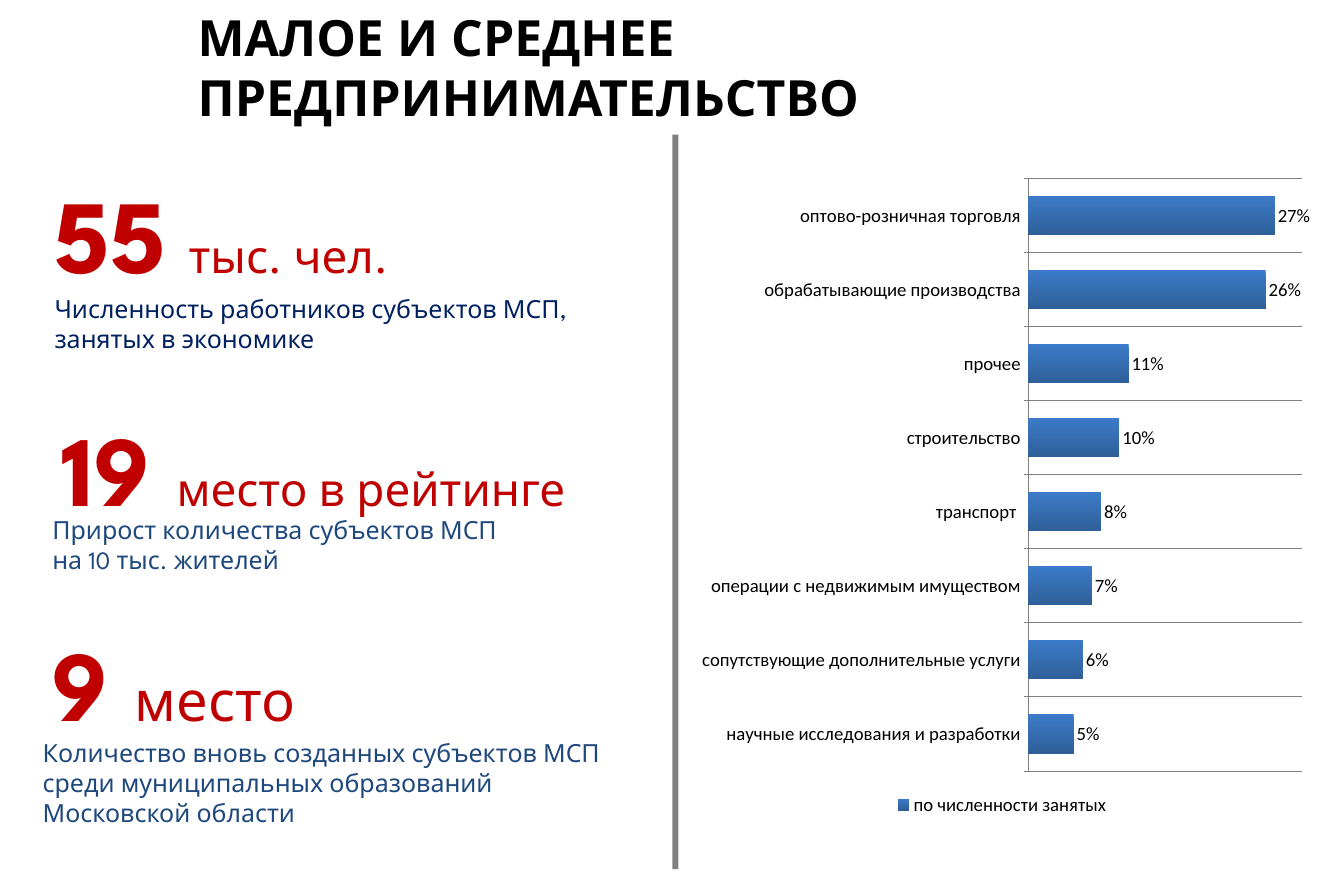
from dataclasses import dataclass

from pptx import Presentation
from pptx.chart.data import CategoryChartData
from pptx.dml.color import RGBColor
from pptx.enum.chart import XL_CHART_TYPE, XL_LABEL_POSITION, XL_LEGEND_POSITION, XL_TICK_MARK
from pptx.enum.shapes import MSO_SHAPE
from pptx.enum.text import MSO_ANCHOR, MSO_AUTO_SIZE
from pptx.util import Inches, Pt

BAR_CLUSTERED = XL_CHART_TYPE.BAR_CLUSTERED
LABEL_OUTSIDE = XL_LABEL_POSITION.OUTSIDE_END
LEGEND_BOTTOM = XL_LEGEND_POSITION.BOTTOM
TICK_OUTSIDE = XL_TICK_MARK.OUTSIDE
RECTANGLE = MSO_SHAPE.RECTANGLE
TOP, MIDDLE = MSO_ANCHOR.TOP, MSO_ANCHOR.MIDDLE
GROW = MSO_AUTO_SIZE.SHAPE_TO_FIT_TEXT
FIXED = MSO_AUTO_SIZE.NONE

HEADING_FONT, CHART_FONT = "League Spartan", "Calibri"
BLACK, RED, NAVY, BLUE, GRAY = "000000", "C00000", "002060", "1F497D", "808080"
BAR_TOP, BAR_BOTTOM = "3C7BC9", "2F5F98"

EMPLOYMENT = [
    ("научные исследования и разработки", 0.05),
    ("сопутствующие дополнительные услуги", 0.06),
    ("операции с недвижимым имуществом", 0.07),
    ("транспорт ", 0.08),
    ("строительство", 0.1),
    ("прочее", 0.11),
    ("обрабатывающие производства", 0.26),
    ("оптово-розничная торговля", 0.27),
]


@dataclass
class Run:
    text: str
    size: float
    color: str
    bold: bool = False


@dataclass
class TextBlock:
    box: tuple[float, float, float, float]
    paragraphs: list[list[Run]]
    margins: tuple[float, float] = (0.19, 0.1)
    wrap: bool = True


INDICATORS = [
    TextBlock((0.63, 2.21, 7.11, 3.43), [
        [Run("55", 100, RED, True), Run(" ", 80, RED, True), Run("тыс. чел.", 44, RED)],
        [Run("Численность работников субъектов МСП, занятых в экономике", 24, NAVY)],
    ], margins=(0.1, 0.05)),
    TextBlock((0.63, 5.33, 7.93, 1.81), [
        [Run("19 ", 96, RED, True), Run("место в рейтинге", 44, RED)],
    ]),
    TextBlock((0.51, 6.77, 8.2, 1), [
        [Run("Прирост количества субъектов МСП", 24, BLUE)],
        [Run("на 10 тыс. жителей", 24, BLUE)],
    ]),
    TextBlock((0.51, 8.2, 3.95, 1.81), [
        [Run("9 ", 96, RED, True), Run("место", 54, RED)],
    ], wrap=False),
    TextBlock((0.38, 9.76, 8.2, 1.4), [
        [Run("Количество вновь созданных субъектов МСП среди муниципальных "
             "образований Московской области", 24, BLUE)],
    ]),
]


def rgb(color: str) -> RGBColor:
    return RGBColor.from_string(color)


def add_text(slide, paragraphs: list[list[Run]], *, box: tuple[float, float, float, float],
             margins: tuple[float, float], wrap: bool = True, anchor=TOP, auto_size=GROW) -> None:
    frame = slide.shapes.add_textbox(*map(Inches, box)).text_frame
    frame.word_wrap = wrap
    frame.auto_size = auto_size
    frame.vertical_anchor = anchor
    frame.margin_left = frame.margin_right = Inches(margins[0])
    frame.margin_top = frame.margin_bottom = Inches(margins[1])
    for index, parts in enumerate(paragraphs):
        paragraph = frame.add_paragraph() if index else frame.paragraphs[0]
        for part in parts:
            run = paragraph.add_run()
            run.text = part.text
            run.font.name = HEADING_FONT
            run.font.size = Pt(part.size)
            run.font.bold = part.bold
            run.font.color.rgb = rgb(part.color)


def add_employment_chart(slide) -> None:
    data = CategoryChartData(number_format="0%")
    data.categories = [sector for sector, _ in EMPLOYMENT]
    data.add_series("по численности занятых", [share for _, share in EMPLOYMENT])
    area = map(Inches, (9.21, 2.21, 8.35, 8.74))
    chart = slide.shapes.add_chart(BAR_CLUSTERED, *area, data).chart
    chart.font.name = CHART_FONT
    chart.font.size = Pt(18)
    chart.font.color.rgb = rgb(BLACK)
    chart.has_title = False
    chart.has_legend = True
    chart.legend.position = LEGEND_BOTTOM
    chart.legend.include_in_layout = False

    # Axes
    sectors, shares = chart.category_axis, chart.value_axis
    sectors.major_tick_mark = TICK_OUTSIDE
    sectors.has_major_gridlines = True
    for line in (sectors.format.line, sectors.major_gridlines.format.line):
        line.color.rgb = rgb(GRAY)
        line.width = Pt(0.75)
    shares.visible = False
    shares.has_major_gridlines = False
    shares.minimum_scale, shares.maximum_scale = 0, 0.3

    # Bars and their labels
    plot = chart.plots[0]
    plot.gap_width = 88
    plot.vary_by_categories = False
    fill = plot.series[0].format.fill
    fill.gradient()
    fill.gradient_angle = 270
    for stop, color in zip(fill.gradient_stops, (BAR_TOP, BAR_BOTTOM)):
        stop.color.rgb = rgb(color)
    plot.has_data_labels = True
    labels = plot.data_labels
    labels.show_value = True
    labels.number_format = "0%"
    labels.number_format_is_linked = False
    labels.position = LABEL_OUTSIDE


def main() -> None:
    deck = Presentation()
    deck.slide_width, deck.slide_height = Inches(17.95), Inches(11.81)
    slide = deck.slides.add_slide(deck.slide_layouts[6])

    # Title
    add_text(slide, [[Run("МАЛОЕ И СРЕДНЕЕ ПРЕДПРИНИМАТЕЛЬСТВО", 48, BLACK, True)]],
             box=(2.47, 0, 15.26, 1.77), margins=(0.17, 0.09), anchor=MIDDLE, auto_size=FIXED)

    # Employment by sector
    add_employment_chart(slide)

    # Divider between the indicators and the chart
    divider = slide.shapes.add_shape(RECTANGLE, *map(Inches, (8.98, 1.8, 0.08, 9.81)))
    divider.shadow.inherit = False
    divider.fill.solid()
    divider.fill.fore_color.rgb = rgb(GRAY)
    divider.line.fill.background()

    # Key indicators
    for block in INDICATORS:
        add_text(slide, block.paragraphs, box=block.box, margins=block.margins, wrap=block.wrap)

    deck.save("out.pptx")


if __name__ == "__main__":
    main()
